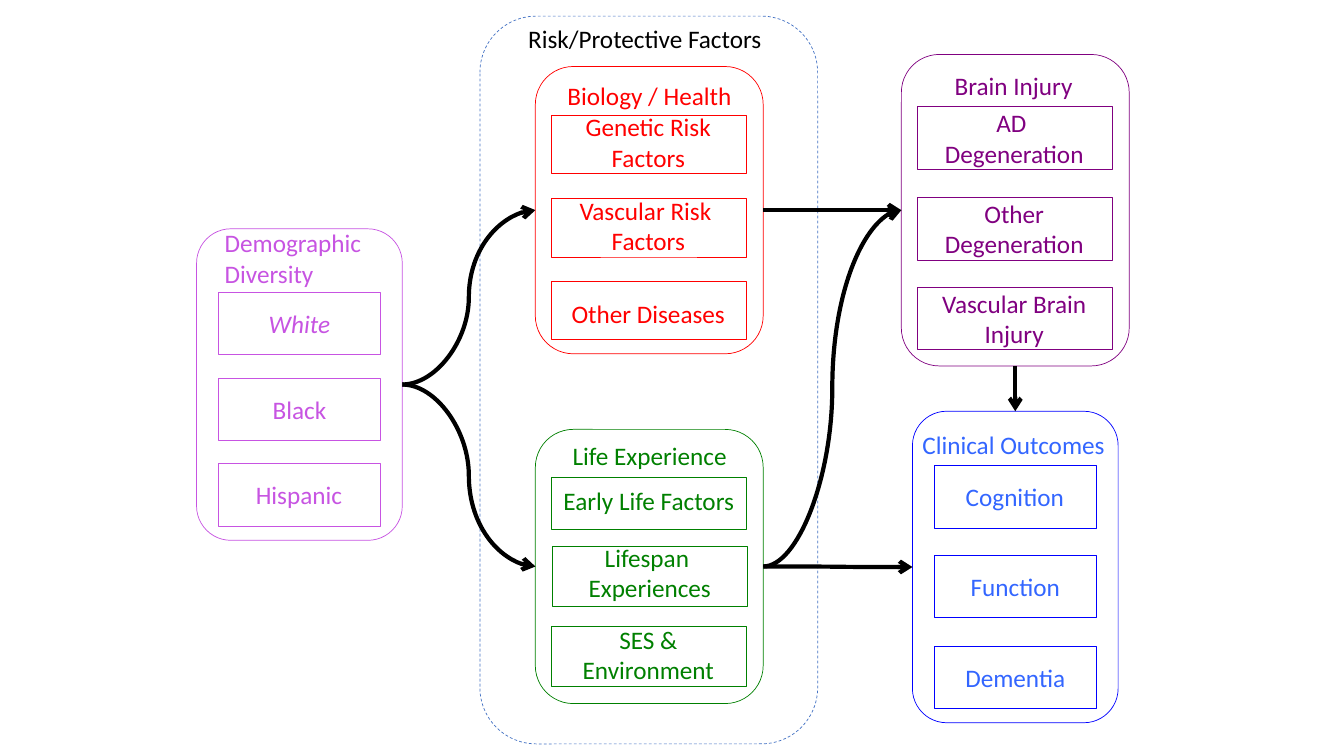
from dataclasses import dataclass

from lxml import etree
from pptx import Presentation, util as u
from pptx.dml.color import RGBColor
from pptx.enum import dml, shapes, text
from pptx.oxml.ns import qn

PX = 9144  # EMU per px, 100 px to the inch
FONT = "Calibri"
ONE_LINE, TWO_LINES = 40, 71
TOP, LEFT, BOTTOM, RIGHT = range(4)  # connection sites

COLORS = {
    "black": "000000",
    "frame": "4472C4",
    "red": "FF0000",
    "green": "008000",
    "blue": "0000FF",
    "sky": "3366FF",
    "purple": "800080",
    "orchid": "C754E2",
}


@dataclass
class Label:
    text: str
    x: int
    y: int
    w: int


@dataclass
class Item:
    """A boxed entry; its label is centred across the box."""
    text: str
    top: int
    label_top: int
    label_w: int
    italic: bool = False
    shift: int = 0


@dataclass
class Panel:
    name: str
    rect: tuple[int, int, int, int]
    title: Label
    line: str
    ink: str
    item_x: int
    item_w: int
    item_h: int
    items: list[Item]


@dataclass
class Arrow:
    source: str
    target: str
    start: int = RIGHT
    end: int = LEFT
    kind: shapes.MSO_CONNECTOR = shapes.MSO_CONNECTOR.CURVE


PANELS = [
    Panel("biology", (531, 66, 226, 285), Label("Biology / Health", 553, 75, 185),
          "red", "red", 547, 193, 58, [
              Item("Genetic Risk\nFactors", 114, 106, 146),
              Item("Vascular Risk \nFactors", 197, 189, 158),
              Item("Other Diseases", 279, 291, 174)]),
    Panel("life", (531, 426, 226, 272), Label("Life Experience", 558, 432, 175),
          "green", "green", 547, 193, 60, [
              Item("Early Life Factors", 474, 477, 191),
              Item("Lifespan \nExperiences", 542, 533, 143, shift=1),
              Item("SES &\nEnvironment", 621, 614, 152)]),
    Panel("clinical", (905, 408, 204, 309), Label("Clinical Outcomes", 905, 421, 204),
          "blue", "sky", 927, 160, 62, [
              Item("Cognition", 462, 473, 119),
              Item("Function", 551, 562, 110),
              Item("Dementia", 641, 652, 120)]),
    Panel("injury", (894, 54, 226, 309), Label("Brain Injury", 937, 65, 139),
          "purple", "purple", 910, 193, 62, [
              Item("AD \nDegeneration", 106, 102, 160),
              Item("Other\nDegeneration", 196, 192, 160),
              Item("Vascular Brain\nInjury", 285, 281, 166)]),
    Panel("demographic", (195, 227, 204, 309), Label("Demographic\nDiversity", 213, 221, 157),
          "orchid", "orchid", 217, 160, 62, [
              Item("White", 290, 301, 82, italic=True),
              Item("Black", 375, 386, 74),
              Item("Hispanic", 460, 471, 107)]),
]
ITEM_HEIGHTS = {"Early Life Factors": 51}

ARROWS = [
    Arrow("demographic", "biology"),
    Arrow("life", "injury"),
    Arrow("biology", "injury"),
    Arrow("life", "clinical"),
    Arrow("demographic", "life"),
    Arrow("injury", "clinical", BOTTOM, TOP, shapes.MSO_CONNECTOR.STRAIGHT),
]


def rgb(color: str) -> RGBColor:
    return RGBColor.from_string(COLORS[color])


def add_outline(parent, kind, rect: tuple[int, int, int, int], color: str):
    sp = parent.add_shape(kind, *(v * PX for v in rect))
    sp.shadow.inherit = False
    sp.fill.background()
    sp.line.color.rgb = rgb(color)
    sp.line.width = u.Pt(0.5)
    return sp


def add_label(parent, label: Label, color: str, align=text.PP_ALIGN.LEFT,
              italic: bool = False) -> None:
    h = TWO_LINES if "\n" in label.text else ONE_LINE
    sp = parent.add_textbox(*(v * PX for v in (label.x, label.y, label.w, h)))
    tf = sp.text_frame
    tf.text = label.text
    tf.word_wrap = False
    tf.auto_size = text.MSO_AUTO_SIZE.SHAPE_TO_FIT_TEXT
    for p in tf.paragraphs:
        p.alignment = align
        for r in p.runs:
            r.font.name = FONT
            r.font.size = u.Pt(18)
            r.font.italic = italic or None
            r.font.color.rgb = rgb(color)


def add_panel(s, panel: Panel):
    """Draw a grouped panel and return its rounded outline."""
    group = s.shapes.add_group_shape().shapes
    add_label(group, panel.title, panel.ink)
    for item in panel.items:
        x = panel.item_x + item.shift
        h = ITEM_HEIGHTS.get(item.text, panel.item_h)
        add_outline(group, shapes.MSO_SHAPE.RECTANGLE,
                    (x, item.top, panel.item_w, h), panel.line)
        label_x = x + (panel.item_w - item.label_w) // 2
        add_label(group, Label(item.text, label_x, item.label_top, item.label_w),
                  panel.ink, text.PP_ALIGN.CENTER, item.italic)
    return add_outline(group, shapes.MSO_SHAPE.ROUNDED_RECTANGLE, panel.rect, panel.line)


def add_arrow(s, arrow: Arrow, outlines: dict) -> None:
    c = s.shapes.add_connector(arrow.kind, 0, 0, 0, 0)
    c.begin_connect(outlines[arrow.source], arrow.start)
    c.end_connect(outlines[arrow.target], arrow.end)
    c.line.color.rgb = rgb("black")
    c.line.width = u.Pt(3)
    sp_pr = c._element.spPr
    etree.SubElement(sp_pr.find(qn("a:ln")), qn("a:tailEnd"), type="arrow")
    etree.SubElement(sp_pr, qn("a:effectLst"))


def main() -> None:
    prs = Presentation()
    prs.slide_width, prs.slide_height = 1333 * PX, 750 * PX
    s = prs.slides.add_slide(prs.slide_layouts[6])

    frame = add_outline(s.shapes, shapes.MSO_SHAPE.ROUNDED_RECTANGLE,
                        (476, 16, 335, 722), "frame")
    frame.line.dash_style = dml.MSO_LINE.DASH
    add_label(s.shapes, Label("Risk/Protective Factors", 514, 18, 260), "black")

    outlines = {panel.name: add_panel(s, panel) for panel in PANELS}
    for arrow in ARROWS:
        add_arrow(s, arrow, outlines)
    prs.save("out.pptx")


if __name__ == "__main__":
    main()
